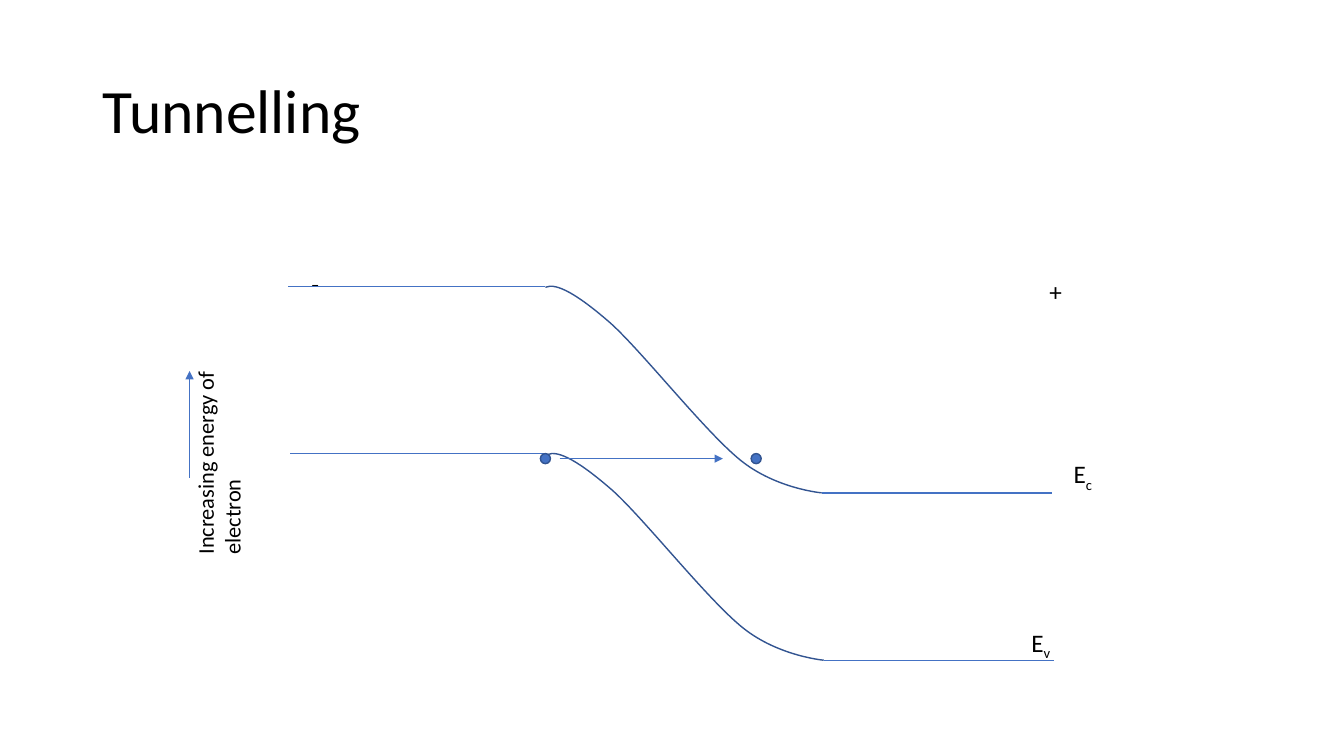
from lxml.etree import SubElement
from pptx import Presentation
from pptx.dml.color import RGBColor
from pptx.enum.shapes import MSO_CONNECTOR, MSO_SHAPE
from pptx.enum.text import MSO_ANCHOR, MSO_AUTO_SIZE, PP_ALIGN
from pptx.oxml.ns import qn
from pptx.util import Inches, Pt

COLORS = {"text": "000000", "line": "4472C4", "edge": "325491"}
FONT = "Calibri"
BEND = [(0, 0), (0.11, -0.05), (0.33, 0.08), (0.65, 0.36), (0.97, 0.65),
        (1.59, 1.44), (1.94, 1.72), (2.29, 2), (2.74, 2.04), (2.74, 2.04)]


class Diagram:
    def __init__(self, prs):
        self.s = prs.slides.add_slide(prs.slide_layouts[5])

    def color(self, name):
        return RGBColor.from_string(COLORS[name])

    def outline(self, line, name, width):
        line.color.rgb = self.color(name)
        line.width = Pt(width)

    def run(self, p, text, size, base=None):
        r = p.add_run()
        r.text = text
        for key, value in {"name": FONT, "size": Pt(size)}.items():
            setattr(r.font, key, value)
        r.font.color.rgb = self.color("text")
        if base:
            r.font._element.set("baseline", str(base * 1000))

    def title(self, text, box):
        sp = self.s.shapes.title
        for key, value in zip(("left", "top", "width", "height"), box):
            setattr(sp, key, Inches(value))
        tf = sp.text_frame
        for key, value in {"vertical_anchor": MSO_ANCHOR.MIDDLE, "word_wrap": True,
                           "auto_size": MSO_AUTO_SIZE.NONE}.items():
            setattr(tf, key, value)
        p = tf.paragraphs[0]
        for key, value in {"line_spacing": 0.9, "alignment": PP_ALIGN.LEFT}.items():
            setattr(p, key, value)
        self.run(p, text, 44)

    def label(self, text, box, size=18, sub=None, vert=None):
        tf = self.s.shapes.add_textbox(*map(Inches, box)).text_frame
        for key, value in {"word_wrap": True,
                           "auto_size": MSO_AUTO_SIZE.SHAPE_TO_FIT_TEXT}.items():
            setattr(tf, key, value)
        if vert:
            tf._txBody.bodyPr.set("vert", vert)
        p = tf.paragraphs[0]
        self.run(p, text, size)
        if sub:
            self.run(p, sub, size, -25)

    def line(self, start, end, width=1, arrow=False, shapes=None):
        shapes = shapes or self.s.shapes
        c = shapes.add_connector(MSO_CONNECTOR.STRAIGHT, *map(Inches, start + end))
        self.outline(c.line, "line", width)
        if arrow:
            SubElement(c.line._get_or_add_ln(), qn("a:tailEnd"), type="triangle")
        SubElement(c._element.spPr, qn("a:effectLst"))

    def curve(self, x, y, shapes):
        fb = shapes.build_freeform(Inches(x), Inches(y))
        fb.add_line_segments([(Inches(x + dx), Inches(y + dy)) for dx, dy in BEND[3::3]],
                             close=False)
        sp = fb.convert_to_shape()
        for i, segment in enumerate(list(sp._element.iter(qn("a:lnTo")))):
            segment.tag = qn("a:cubicBezTo")
            segment.remove(segment[0])
            for dx, dy in BEND[3 * i + 1:3 * i + 4]:
                SubElement(segment, qn("a:pt"), x=str(Inches(dx)), y=str(Inches(dy)))
        sp.shadow.inherit = False
        sp.fill.background()
        self.outline(sp.line, "edge", 1)

    def band(self, x, y):
        shapes = self.s.shapes.add_group_shape().shapes
        self.line((x, y), (x + 2.55, y), shapes=shapes)
        self.curve(x + 2.55, y + 0.01, shapes)
        self.line((x + 5.29, y + 2.05), (x + 7.57, y + 2.05), shapes=shapes)

    def electron(self, x, y, size=0.1):
        sp = self.s.shapes.add_shape(MSO_SHAPE.OVAL, *map(Inches, (x, y, size, size)))
        sp.shadow.inherit = False
        sp.fill.solid()
        sp.fill.fore_color.rgb = self.color("line")
        self.outline(sp.line, "edge", 1)


def main():
    prs = Presentation()
    prs.slide_width, prs.slide_height = Inches(13.33), Inches(7.5)
    d = Diagram(prs)
    d.title("Tunnelling", (0.92, 0.4, 11.5, 1.45))
    d.label("E", (10.13, 6.17, 0.55, 0.4), sub="v")
    d.label("E", (10.55, 4.5, 0.55, 0.4), sub="c")
    d.label("Increasing energy of electron", (1.85, 2.83, 0.47, 2.77), 16, vert="vert270")
    d.line((1.88, 4.74), (1.88, 3.68), 0.5, arrow=True)
    d.band(2.88, 4.5)
    d.label("+", (10.31, 2.69, 0.55, 0.4))
    d.label("-", (2.99, 2.61, 0.55, 0.4))
    d.band(2.86, 2.84)
    for x in (5.36, 7.45):
        d.electron(x, 4.5)
    d.line((5.55, 4.55), (7.17, 4.55), 0.5, arrow=True)
    prs.save("out.pptx")


if __name__ == "__main__":
    main()
